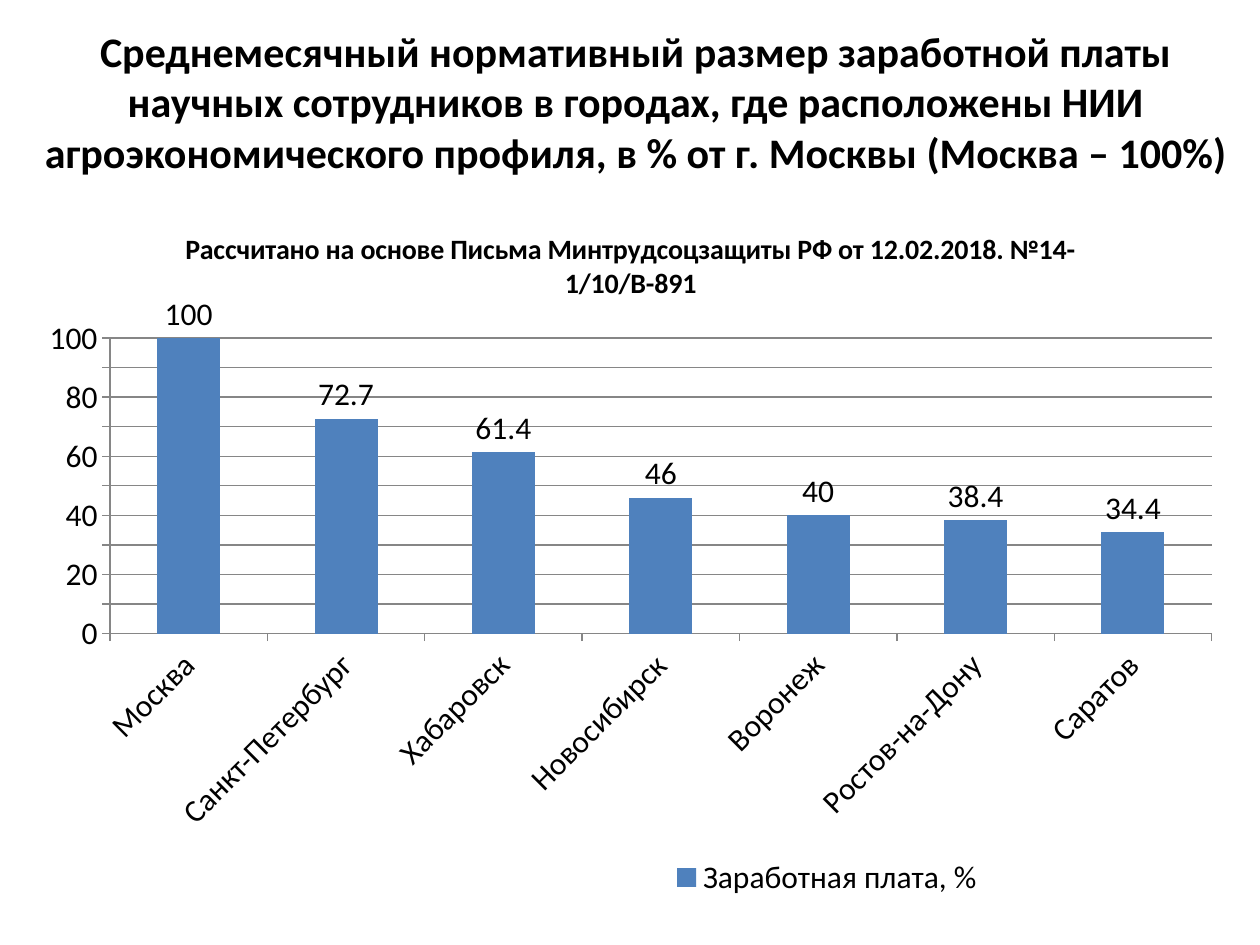
import pptx
import pptx.chart.data
import pptx.dml.color
import pptx.enum.chart
import pptx.enum.text
import pptx.oxml
import pptx.oxml.ns
import pptx.util
from pptx.util import Inches

COLORS = {"text": "000000", "bar": "4F81BD", "grid": "868686"}
FONT = "Calibri"
SALARY_PERCENT = {
    "Москва": 100,
    "Санкт-Петербург": 72.7,
    "Хабаровск": 61.4,
    "Новосибирск": 46,
    "Воронеж": 40,
    "Ростов-на-Дону": 38.4,
    "Саратов": 34.4,
}


def style_font(font, size, bold):
    font.name = FONT
    font.size = pptx.util.Pt(size)
    font.bold = bold
    font.color.rgb = pptx.dml.color.RGBColor.from_string(COLORS["text"])


def place_in_chart(element, index, target, **fractions):
    for old_layout in element.findall(pptx.oxml.ns.qn("c:layout")):
        element.remove(old_layout)
    inner = '<c:layoutTarget val="inner"/>' if target else ""
    modes = "".join(f'<c:{side}Mode val="edge"/>' for side in "xy")
    sizes = "".join(f'<c:{key} val="{value}"/>' for key, value in fractions.items())
    element.insert(index, pptx.oxml.parse_xml(
        f'<c:layout {pptx.oxml.ns.nsdecls("c")}><c:manualLayout>'
        f"{inner}{modes}{sizes}</c:manualLayout></c:layout>"))


deck = pptx.Presentation()
deck.slide_width = Inches(10)
deck.slide_height = Inches(7.5)
slide = deck.slides.add_slide(deck.slide_layouts[5])

heading = slide.shapes.title
heading.left, heading.top = Inches(0.2), Inches(0.13)
heading.width, heading.height = Inches(9.69), Inches(1.34)
heading.text_frame.text = (
    "Среднемесячный нормативный размер заработной платы научных сотрудников "
    "в городах, где расположены НИИ агроэкономического профиля, "
    "в % от г. Москвы (Москва – 100%)")
heading.text_frame.vertical_anchor = pptx.enum.text.MSO_ANCHOR.MIDDLE
heading_line = heading.text_frame.paragraphs[0]
heading_line.alignment = pptx.enum.text.PP_ALIGN.CENTER
style_font(heading_line.runs[0].font, 24, True)

salary_data = pptx.chart.data.CategoryChartData()
salary_data.categories = list(SALARY_PERCENT)
salary_data.add_series("Заработная плата, %", list(SALARY_PERCENT.values()))
salary_chart = slide.shapes.add_chart(
    pptx.enum.chart.XL_CHART_TYPE.COLUMN_CLUSTERED,
    Inches(0.2), Inches(1.62), Inches(9.61), Inches(5.59), salary_data).chart
style_font(salary_chart.font, 18, False)

salary_chart.has_title = True
source_note = salary_chart.chart_title.text_frame
source_note.text = (
    "Рассчитано на основе Письма Минтрудсоцзащиты РФ от 12.02.2018. №14-1/10/В-891")
style_font(source_note.paragraphs[0].runs[0].font, 16, True)
salary_chart.chart_title.include_in_layout = False

salary_chart.has_legend = True
legend = salary_chart.legend
legend.position = pptx.enum.chart.XL_LEGEND_POSITION.BOTTOM
legend.include_in_layout = False
style_font(legend.font, 18, False)

bars = salary_chart.plots[0]
bars.gap_width = 150
bars.vary_by_categories = False
salary_series = bars.series[0]
salary_series.format.fill.solid()
salary_series.format.fill.fore_color.rgb = pptx.dml.color.RGBColor.from_string(COLORS["bar"])
bars.has_data_labels = True
bars.data_labels.show_value = True
bars.data_labels.position = pptx.enum.chart.XL_LABEL_POSITION.OUTSIDE_END
style_font(bars.data_labels.font, 18, False)

cities = salary_chart.category_axis
percent = salary_chart.value_axis
percent.minimum_scale = 0
percent.maximum_scale = 100
percent.major_unit = 10
percent.has_major_gridlines = True
for axis in (cities, percent):
    axis.major_tick_mark = pptx.enum.chart.XL_TICK_MARK.OUTSIDE
    style_font(axis.tick_labels.font, 18, False)
for line in (cities.format.line, percent.format.line, percent.major_gridlines.format.line):
    line.color.rgb = pptx.dml.color.RGBColor.from_string(COLORS["grid"])
    line.width = pptx.util.Pt(0.75)

chart_xml = salary_chart.element
cities_text = chart_xml.find(".//" + pptx.oxml.ns.qn("c:catAx")).find(pptx.oxml.ns.qn("c:txPr"))
cities_text.find(pptx.oxml.ns.qn("a:bodyPr")).set("rot", "-2700000")
place_in_chart(chart_xml.find(".//" + pptx.oxml.ns.qn("c:plotArea")), 0, True,
               x=0.07, y=0.19, w=0.91, h=0.42)
place_in_chart(chart_xml.find(".//" + pptx.oxml.ns.qn("c:legend")), 1, False,
               x=0.53, y=0.92)

deck.save("out.pptx")
